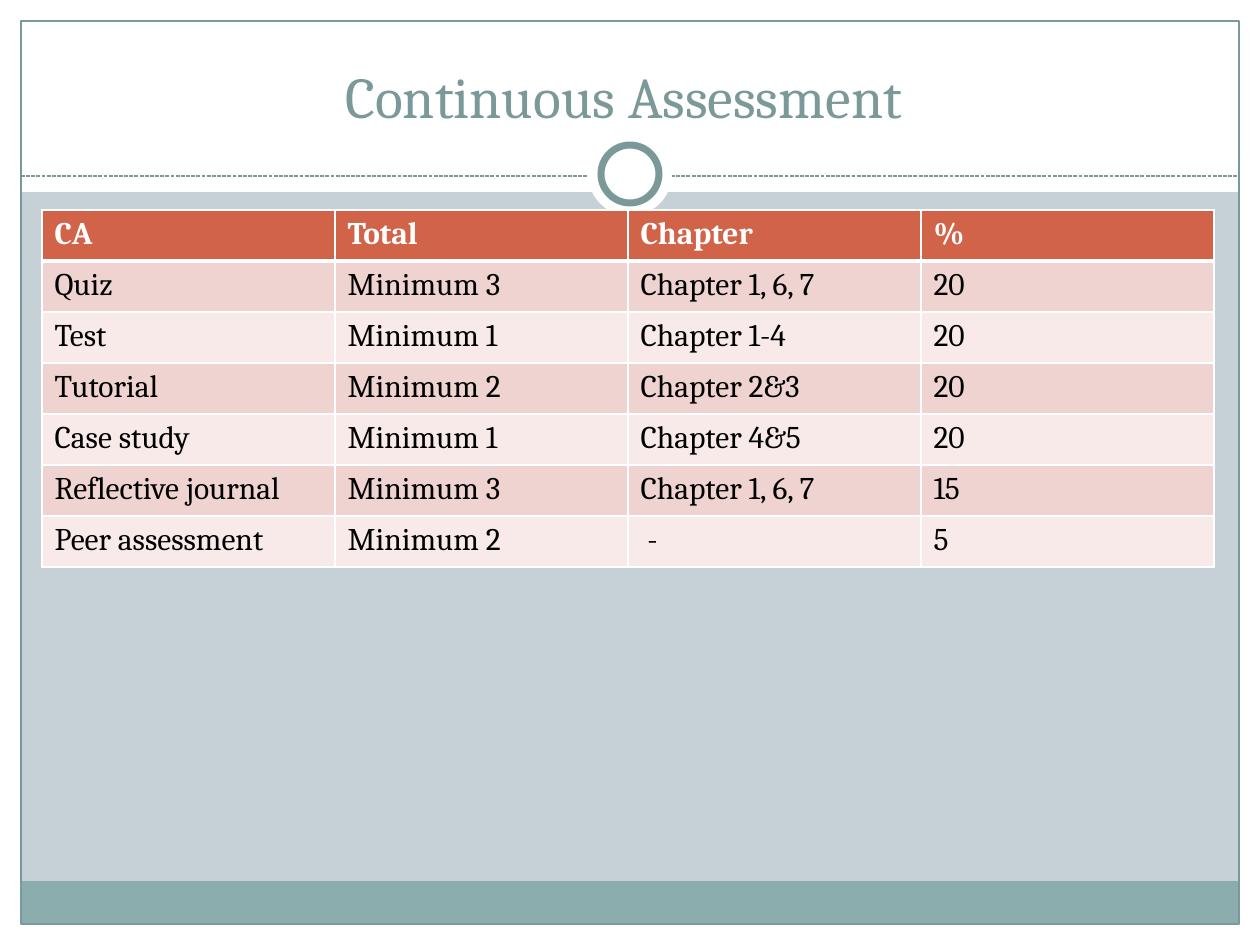
from dataclasses import dataclass

from lxml import etree
from pptx import Presentation
from pptx import util as u
from pptx.dml.color import RGBColor
from pptx.enum import dml, shapes, text
from pptx.oxml.ns import qn

SCALE = 914400 / 126  # EMU in one px
W, H = 1260, 945


@dataclass(frozen=True)
class Theme:
    font: str = "Cambria"
    title_pt: int = 33
    table_pt: int = 18
    back: str = "C5D1D7"
    white: str = "FFFFFF"
    black: str = "000000"
    accent: str = "7C999A"
    footer: str = "8CADAE"
    header: str = "D16349"
    bands: tuple = ("EED3D0", "F7EAE9")


T = Theme()

ROWS = [
    ["CA", "Total", "Chapter", "%"],
    ["Quiz", "Minimum 3", "Chapter 1, 6, 7", "20"],
    ["Test", "Minimum 1", "Chapter 1-4", "20"],
    ["Tutorial", "Minimum 2", "Chapter 2&3", "20"],
    ["Case study", "Minimum 1", "Chapter 4&5", "20"],
    ["Reflective journal", "Minimum 3", "Chapter 1, 6, 7", "15"],
    ["Peer assessment", "Minimum 2", " -", "5"],
]


def px(*values):
    return [u.Emu(round(v * SCALE)) for v in values]


def rgb(color):
    return RGBColor.from_string(color)


def paint(fill, color):
    fill.solid()
    fill.fore_color.rgb = rgb(color)


def add_text(p, content, color, **fmt):
    r = p.add_run()
    r.text = content
    r.font.color.rgb = rgb(color)
    for name, value in {"name": T.font, **fmt}.items():
        setattr(r.font, name, value)


def add_shape(s, kind, box, fill=None, line=None, width=0.75):
    sp = s.shapes.add_shape(kind, *px(*box))
    sp.shadow.inherit = False
    if fill:
        paint(sp.fill, fill)
    else:
        sp.fill.background()
    if line:
        sp.line.color.rgb = rgb(line)
        sp.line.width = u.Pt(width)
    else:
        sp.line.fill.background()


def add_dashed_line(s, x1, y1, x2, y2):
    cx = s.shapes.add_connector(shapes.MSO_CONNECTOR.STRAIGHT, *px(x1, y1, x2, y2))
    cx.line.color.rgb = rgb(T.accent)
    cx.line.width = u.Pt(0.75)
    cx.line.dash_style = dml.MSO_LINE.SQUARE_DOT
    etree.SubElement(cx._element.spPr, qn("a:effectLst"))


def add_frame(s):
    rect, oval = shapes.MSO_SHAPE.RECTANGLE, shapes.MSO_SHAPE.OVAL
    edge = 21
    for box in [(0, H - edge, W, edge), (0, 0, W, 192),
                (0, 0, edge, H), (W - edge, 0, edge, H)]:
        add_shape(s, rect, box, T.white)
    inner = W - 2 * edge
    add_shape(s, rect, (edge, 881, inner, 43), T.footer)
    add_shape(s, rect, (edge, edge, inner, H - 2 * edge), line=T.accent)
    add_dashed_line(s, edge, 176, W - edge, 176)
    add_shape(s, oval, (588, 132, 84, 84), T.white)
    add_shape(s, oval, (601, 145, 58, 58), T.white, T.accent, 4)


def add_title(s, content):
    tf = s.shapes.add_textbox(*px(42, 31, 1176, 105)).text_frame
    tf.word_wrap = True
    tf.vertical_anchor = text.MSO_ANCHOR.BOTTOM
    p = tf.paragraphs[0]
    p.alignment = text.PP_ALIGN.CENTER
    add_text(p, content, T.accent, size=u.Pt(T.title_pt))


def set_borders(cell, **widths):
    """Draw white borders; widths are points by side: L, R, T, B."""
    tcPr = cell._tc.get_or_add_tcPr()
    for i, (side, width) in enumerate(widths.items()):
        ln = etree.Element(qn(f"a:ln{side}"), w=str(u.Pt(width)))
        fill = etree.SubElement(ln, qn("a:solidFill"))
        etree.SubElement(fill, qn("a:srgbClr"), val=T.white)
        tcPr.insert(i, ln)  # borders come before the cell fill


def add_table(s, rows, left, top, col_w, row_h):
    n, m = len(rows), len(rows[0])
    table = s.shapes.add_table(n, m, *px(left, top, col_w * m, row_h * n)).table
    for col in table.columns:
        col.width = px(col_w)[0]
    for i, values in enumerate(rows):
        table.rows[i].height = px(row_h)[0]
        head = i == 0
        for j, value in enumerate(values):
            cell = table.cell(i, j)
            paint(cell.fill, T.header if head else T.bands[(i - 1) % 2])
            set_borders(cell, L=1, R=1, T=3 if i == 1 else 1, B=3 if head else 1)
            add_text(cell.text_frame.paragraphs[0], value,
                     T.white if head else T.black,
                     size=u.Pt(T.table_pt), bold=head)


def main():
    prs = Presentation()
    prs.slide_width, prs.slide_height = px(W, H)
    s = prs.slides.add_slide(prs.slide_layouts[6])
    paint(s.background.fill, T.back)
    add_frame(s)
    add_title(s, "Continuous Assessment ")
    add_table(s, ROWS, left=42, top=210, col_w=293, row_h=51)
    prs.save("out.pptx")


if __name__ == "__main__":
    main()
